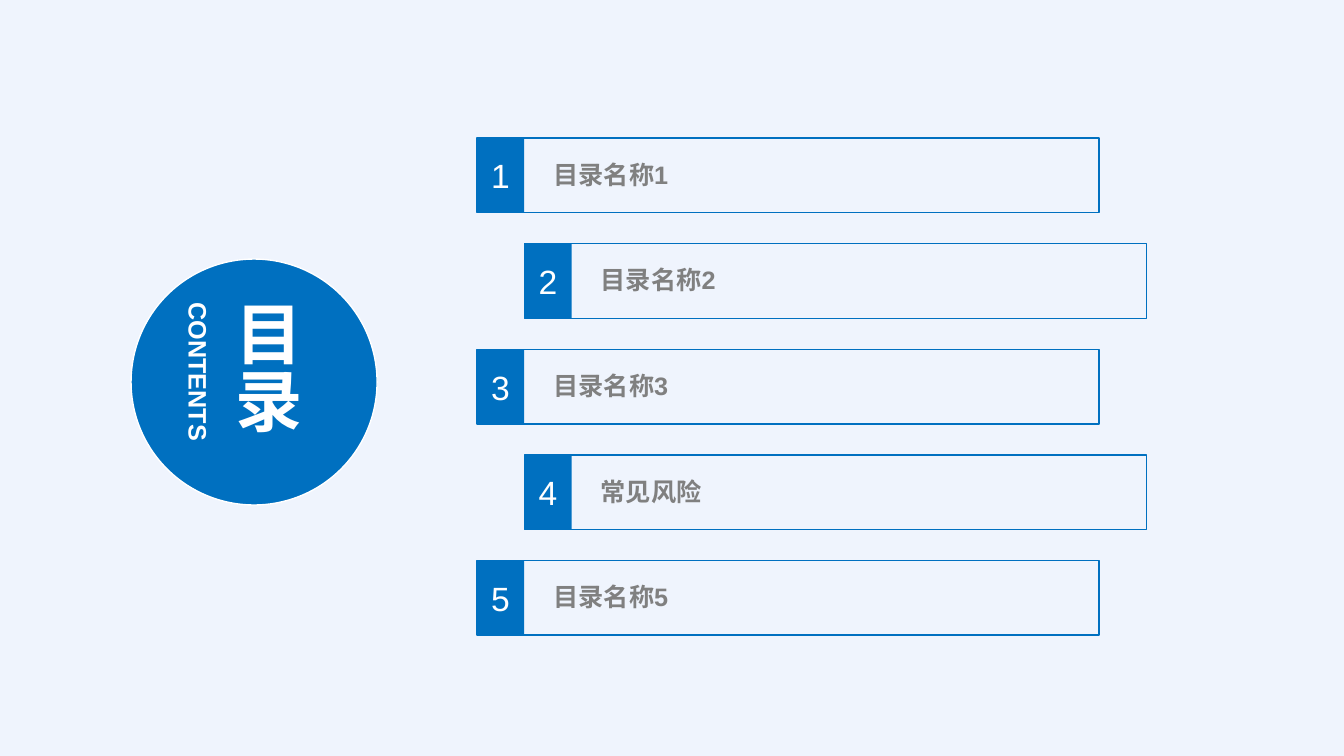
from dataclasses import dataclass

from pptx import Presentation
from pptx import util as u
from pptx.dml.color import RGBColor
from pptx.enum import lang, shapes, text
from pptx.oxml import parse_xml
from pptx.oxml.ns import nsdecls


@dataclass(frozen=True)
class Theme:
    font: str = "Arial"
    back: str = "EFF4FD"
    blue: str = "0070C0"
    white: str = "FFFFFF"
    gray: str = "808080"
    head: int = 48
    num: int = 24
    body: int = 18
    rule: int = 1


T = Theme()
WIDE, HIGH = 13.33, 7.5
LEFT, TOP = 4.73, 1.37
STEP = 1.048  # distance between rows
TAB, BAR, ROW = 0.47, 6.17, 0.74  # number width, bar width, bar height
ITEMS = ["目录名称1", "目录名称2", "目录名称3", "常见风险", "目录名称5"]


def rgb(code):
    return RGBColor.from_string(code)


def inch(*sizes):
    return [u.Inches(n) for n in sizes]


def shape(host, kind, area, fill=None, line=None):
    item = host.shapes.add_shape(kind, *inch(*area))
    item.shadow.inherit = False
    if fill:
        item.fill.solid()
        item.fill.fore_color.rgb = rgb(fill)
    else:
        item.fill.background()
    if line:
        item.line.color.rgb = rgb(line)
        item.line.width = u.Pt(T.rule)
    else:
        item.line.fill.background()
    return item


def write(item, words, size, color, bold=False, align=text.PP_ALIGN.LEFT,
          anchor=text.MSO_ANCHOR.TOP):
    frame = item.text_frame
    frame.word_wrap = True
    frame.vertical_anchor = anchor
    para = frame.paragraphs[0]
    para.alignment = align
    run = para.add_run()
    run.text = words
    font = run.font
    font.name, font.size, font.bold = T.font, u.Pt(size), bold
    font.color.rgb = rgb(color)
    font.language_id = lang.MSO_LANGUAGE_ID.SIMPLIFIED_CHINESE
    east = parse_xml(f'<a:ea {nsdecls("a")} typeface="{T.font}"/>')
    run.font.fill  # the fill comes before the typefaces
    run._r.rPr.find("{*}latin").addnext(east)


def label(host, area, words, size, color, flush=False, **form):
    box = host.shapes.add_textbox(*inch(*area))
    frame = box.text_frame
    if flush:
        frame.margin_left = frame.margin_right = 0
        frame.margin_top = frame.margin_bottom = 0
    write(box, words, size, color, bold=True, **form)
    frame.auto_size = text.MSO_AUTO_SIZE.SHAPE_TO_FIT_TEXT
    return box


def badge(slide):
    """Blue disc with the two vertical titles."""
    shape(slide, shapes.MSO_SHAPE.OVAL, (1.3, 2.57, 2.44, 2.44), T.blue, T.white)
    form = dict(flush=True, align=text.PP_ALIGN.JUSTIFY)
    title = label(slide, (2.24, 2.98, 0.81, 1.58), "目录", T.head, T.white,
                  anchor=text.MSO_ANCHOR.MIDDLE, **form)
    title.element.txBody.bodyPr.set("vert", "eaVert")
    sub = label(slide, (1.19, 3.63, 1.56, 0.3), "CONTENTS", T.body, T.white, **form)
    sub.rotation = 90


def entry(slide, row, words):
    """Numbered bar; every second one is indented by one number width."""
    x, y = LEFT + row % 2 * TAB, TOP + row * STEP
    group = slide.shapes.add_group_shape()
    rect = shapes.MSO_SHAPE.RECTANGLE
    shape(group, rect, (x, y, BAR, ROW), line=T.blue)
    tab = shape(group, rect, (x, y, TAB, ROW), T.blue)
    write(tab, str(row + 1), T.num, T.white, align=text.PP_ALIGN.CENTER,
          anchor=text.MSO_ANCHOR.MIDDLE)
    label(group, (x + 0.66, y + 0.16, BAR - 0.66, 0.4), words, T.body, T.gray)


def main():
    deck = Presentation()
    deck.slide_width, deck.slide_height = inch(WIDE, HIGH)
    slide = deck.slides.add_slide(deck.slide_layouts[6])
    slide.background.fill.solid()
    slide.background.fill.fore_color.rgb = rgb(T.back)
    badge(slide)
    for row, words in enumerate(ITEMS):
        entry(slide, row, words)
    deck.save("out.pptx")


if __name__ == "__main__":
    main()
